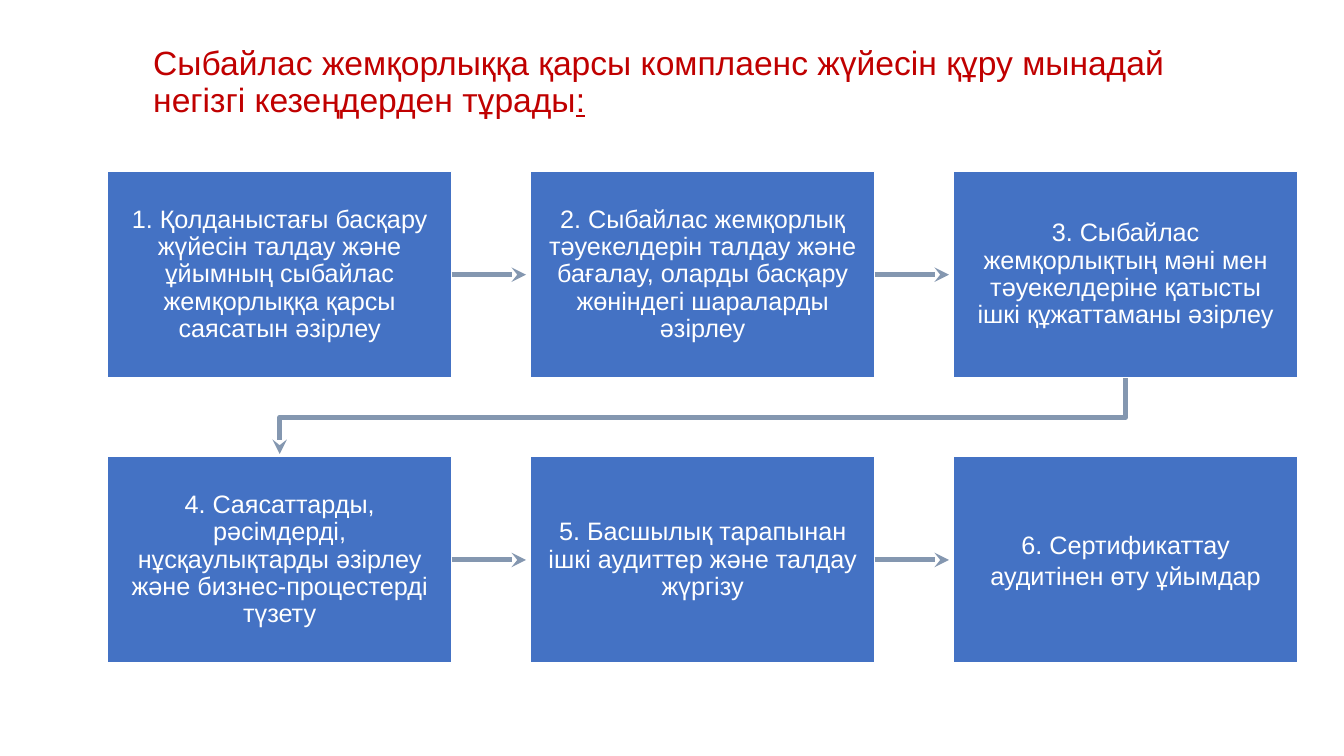
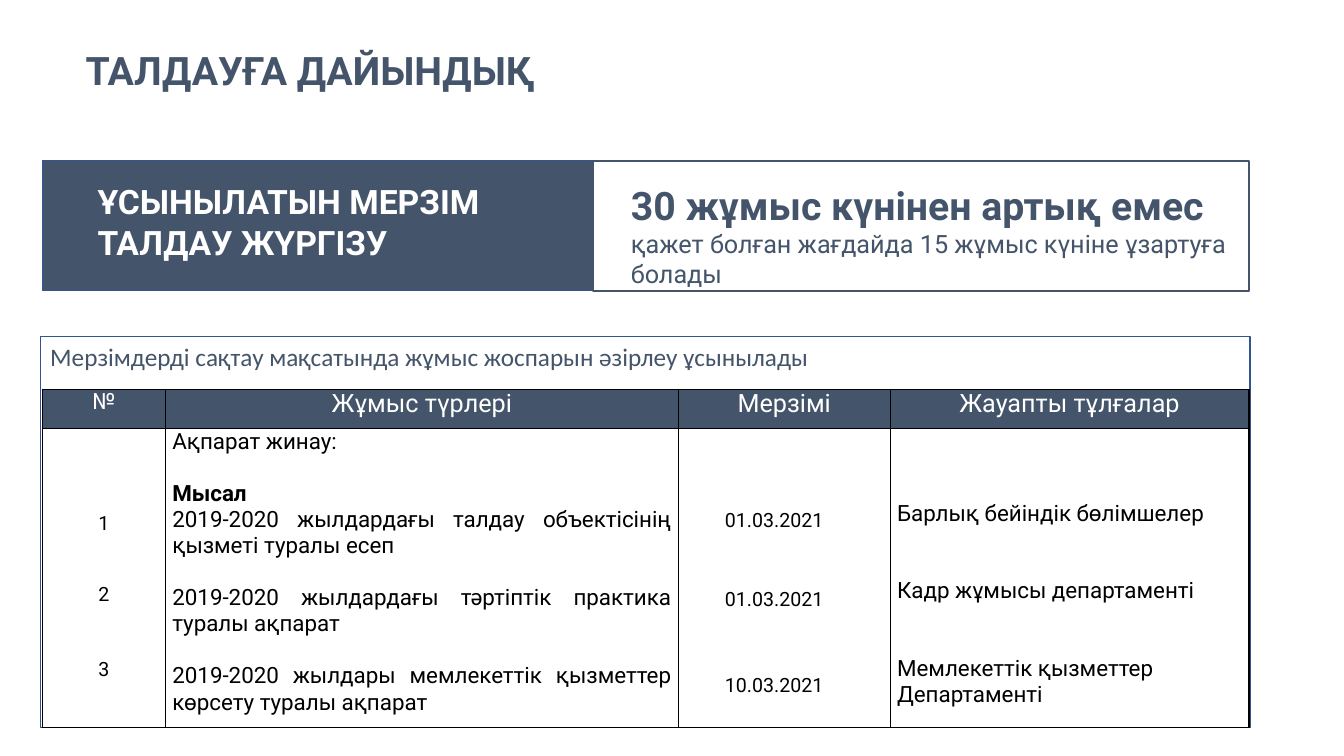
"""Build two slides: the stages of a compliance system and the preparation plan."""
from lxml.etree import SubElement
from pptx import Presentation
from pptx.dml.color import RGBColor
from pptx.enum.shapes import MSO_CONNECTOR, MSO_SHAPE
from pptx.enum.text import MSO_ANCHOR as Anchor, MSO_AUTO_SIZE as AutoSize, PP_ALIGN as Align
from pptx.oxml.ns import qn
from pptx.util import Inches, Pt

WIDTH, HEIGHT = Inches(13.33), Inches(7.5)
COLORS = {
    "red": "C00000", "blue": "4472C4", "arrow": "8497B0", "slate": "44546A",
    "edge": "325491", "white": "FFFFFF", "black": "000000",
}

BOX_LEFT, BOX_TOP = 8.02, 22.67
BOX_WIDTH, BOX_HEIGHT = 25.58, 27.33
COLUMN_STEP, ROW_STEP = 31.47, 37.73
COLUMNS, ARROW_GAP = 3, 0.35
STAGES = [
    "1. Қолданыстағы басқару жүйесін талдау және ұйымның сыбайлас жемқорлыққа қарсы саясатын әзірлеу",
    "2. Сыбайлас жемқорлық тәуекелдерін талдау және бағалау, оларды басқару жөніндегі шараларды әзірлеу",
    "3. Сыбайлас жемқорлықтың мәні мен тәуекелдеріне қатысты ішкі құжаттаманы әзірлеу",
    "4. Саясаттарды, рәсімдерді, нұсқаулықтарды әзірлеу және бизнес-процестерді түзету",
    "5. Басшылық тарапынан ішкі аудиттер және талдау жүргізу",
    "6. Сертификаттау аудитінен өту ұйымдар",
]

PLAN_COLUMNS = [9.15, 38.18, 15.75, 26.7]
PLAN_ROWS = [5.2, 39.6]
PLAN_HEADER = [("№", 16), ("Жұмыс түрлері", 18), ("Мерзімі", 18), ("Жауапты тұлғалар", 18)]
PLAN_BODY = [
    {"size": 14, "align": Align.CENTER, "top": 60, "left": 0.07,
     "lines": [("1", 0), ("2", 34), ("3", 37)]},
    {"size": 16, "align": Align.JUSTIFY, "top": 0, "left": 0.07,
     "lines": [
         ("Ақпарат жинау:", 0),
         ("Мысал", 18.75),
         ("2019-2020 жылдардағы талдау объектісінің қызметі туралы есеп", 0),
         ("2019-2020 жылдардағы тәртіптік практика туралы ақпарат", 18.75),
         ("2019-2020 жылдары мемлекеттік қызметтер көрсету туралы ақпарат", 18.75),
     ]},
    {"size": 14, "align": Align.LEFT, "top": 57.5, "left": 0.46,
     "lines": [("01.03.2021", 0), ("01.03.2021", 40), ("10.03.2021", 45)]},
    {"size": 16, "align": Align.LEFT, "top": 51.5, "left": 0.07,
     "lines": [
         ("Барлық бейіндік бөлімшелер", 0),
         ("Кадр жұмысы департаменті", 37),
         ("Мемлекеттік қызметтер Департаменті", 37),
     ]},
]


def across(share):
    return round(WIDTH * share / 100)


def down(share):
    return round(HEIGHT * share / 100)


def area(left, top, width, height):
    return across(left), down(top), across(width), down(height)


def rgb(name):
    return RGBColor.from_string(COLORS[name])


def set_font(font, size, color, name="Roboto", bold=False):
    font.size, font.name, font.bold = Pt(size), name, bold
    font.color.rgb = rgb(color)


def set_line(line, color, width):
    line.color.rgb = rgb(color)
    line.width = Pt(width)


def add_title(slide, place, text, size, color, name, bold=False):
    title = slide.shapes.title
    title.left, title.top, title.width, title.height = area(*place)
    frame = title.text_frame
    frame.text = text
    frame.auto_size = AutoSize.NONE
    frame.vertical_anchor = Anchor.MIDDLE
    paragraph = frame.paragraphs[0]
    paragraph.alignment, paragraph.line_spacing = Align.LEFT, 0.9
    set_font(paragraph.font, size, color, name, bold)
    return paragraph


def add_box(slide, place, fill, line, width):
    box = slide.shapes.add_shape(MSO_SHAPE.RECTANGLE, *area(*place))
    box.shadow.inherit = False
    if fill:
        box.fill.solid()
        box.fill.fore_color.rgb = rgb(fill)
    else:
        box.fill.background()
    set_line(box.line, line, width)
    return box


def add_text(slide, place):
    frame = slide.shapes.add_textbox(*area(*place)).text_frame
    frame.word_wrap = True
    return frame


def finish_arrow(arrow):
    set_line(arrow.line, "arrow", 3.5)
    SubElement(arrow.line._get_or_add_ln(), qn("a:tailEnd"), type="stealth")


def add_arrow(slide, left, right, middle):
    arrow = slide.shapes.add_connector(
        MSO_CONNECTOR.STRAIGHT, across(left), down(middle), across(right), down(middle))
    finish_arrow(arrow)
    SubElement(arrow._element.spPr, qn("a:effectLst"))


def add_bent_arrow(slide, points):
    start, *others = [(across(x), down(y)) for x, y in points]
    builder = slide.shapes.build_freeform(*start)
    builder.add_line_segments(others, close=False)
    arrow = builder.convert_to_shape()
    arrow.fill.background()
    arrow.shadow.inherit = False
    finish_arrow(arrow)


def add_stage(slide, left, top, text, spacing):
    box = add_box(slide, (left, top, BOX_WIDTH, BOX_HEIGHT), "blue", "white", 1)
    frame = box.text_frame
    frame.text = text
    frame.margin_left = frame.margin_right = Inches(0.14)
    frame.margin_top = frame.margin_bottom = Inches(0.14)
    paragraph = frame.paragraphs[0]
    paragraph.alignment, paragraph.line_spacing = Align.CENTER, spacing
    set_font(paragraph.font, 18, "white", "Arial")


def style_cell(cell, fill=None):
    properties = cell._tc.get_or_add_tcPr()
    for side in ("a:lnL", "a:lnR", "a:lnT", "a:lnB"):
        border = SubElement(properties, qn(side), w=str(Pt(1)))
        SubElement(SubElement(border, qn("a:solidFill")), qn("a:srgbClr"), val=COLORS["black"])
    if fill:
        cell.fill.solid()
        cell.fill.fore_color.rgb = rgb(fill)
    else:
        cell.fill.background()


def fill_cell(cell, lines, size, color, align, top=0, left=0.07):
    cell.margin_left, cell.margin_right = Inches(left), Inches(0.07)
    cell.margin_top, cell.margin_bottom = Pt(top), 0
    cell.text = "\n".join(text for text, _ in lines)
    for paragraph, (text, before) in zip(cell.text_frame.paragraphs, lines):
        paragraph.alignment, paragraph.space_before = align, Pt(before)
        set_font(paragraph.font, size, color, bold=text == "Мысал")


def add_plan_table(slide):
    place = area(3.15, 51.47, sum(PLAN_COLUMNS), sum(PLAN_ROWS))
    table = slide.shapes.add_table(len(PLAN_ROWS), len(PLAN_COLUMNS), *place).table
    table.first_row = table.horz_banding = False
    for row, share in zip(table.rows, PLAN_ROWS):
        row.height = down(share)
    for index, share in enumerate(PLAN_COLUMNS):
        table.columns[index].width = across(share)
        header, body = table.cell(0, index), table.cell(1, index)
        style_cell(header, "slate")
        style_cell(body)
        text, size = PLAN_HEADER[index]
        fill_cell(header, [(text, 0)], size, "white", Align.CENTER)
        fill_cell(body, color="black", **PLAN_BODY[index])


def build_stages(slide):
    title = add_title(
        slide, (10.65, 2.67, 81.6, 16.67),
        "Сыбайлас жемқорлыққа қарсы комплаенс жүйесін құру мынадай негізгі кезеңдерден тұрады",
        24, "red", "Arial")
    colon = title.add_run()
    colon.text = ":"
    colon.font.underline = True
    for index, text in enumerate(STAGES):
        row, column = divmod(index, COLUMNS)
        left, top = BOX_LEFT + column * COLUMN_STEP, BOX_TOP + row * ROW_STEP
        add_stage(slide, left, top, text, 1 if index == len(STAGES) - 1 else 0.9)
        if column < COLUMNS - 1:
            add_arrow(slide, left + BOX_WIDTH, left + COLUMN_STEP - ARROW_GAP, top + BOX_HEIGHT / 2)
    first = BOX_LEFT + BOX_WIDTH / 2
    last = first + (COLUMNS - 1) * COLUMN_STEP
    bottom, next_top = BOX_TOP + BOX_HEIGHT, BOX_TOP + ROW_STEP
    middle = (bottom + next_top) / 2
    add_bent_arrow(slide, [
        (last, bottom), (last, middle), (first, middle), (first, next_top - ARROW_GAP)])


def build_preparation(slide):
    add_title(slide, (5.62, 4.13, 86.25, 10.93), "ТАЛДАУҒА ДАЙЫНДЫҚ", 28, "slate", "Roboto", True)
    add_box(slide, (3.15, 21.2, 41, 17.2), "slate", "edge", 1)

    plan = add_box(slide, (3, 44.53, 90, 51.73), None, "edge", 1).text_frame
    plan.text = "Мерзімдерді сақтау мақсатында жұмыс жоспарын әзірлеу ұсынылады"
    plan.vertical_anchor = Anchor.TOP
    plan.paragraphs[0].alignment = Align.LEFT
    set_font(plan.paragraphs[0].font, 18, "slate", "Calibri")
    add_plan_table(slide)

    term = add_text(slide, (6.52, 23.33, 36.2, 12.13))
    term.text = "ҰСЫНЫЛАТЫН МЕРЗІМ\nТАЛДАУ ЖҮРГІЗУ"
    for paragraph in term.paragraphs:
        set_font(paragraph.font, 24, "white", bold=True)

    limit = add_text(slide, (46.2, 23.33, 50, 15.73)).paragraphs[0]
    for text, size, bold in [
        ("30 жұмыс күнінен артық емес ", 28, True),
        ("қажет болған жағдайда 15 жұмыс күніне ұзартуға болады", 18, False),
    ]:
        run = limit.add_run()
        run.text = text
        set_font(run.font, size, "slate", bold=bold)
    add_box(slide, (44.1, 21.33, 48.83, 17.2), None, "slate", 1.5)


def main():
    presentation = Presentation()
    presentation.slide_width, presentation.slide_height = WIDTH, HEIGHT
    title_only = presentation.slide_layouts[5]
    for build in (build_stages, build_preparation):
        build(presentation.slides.add_slide(title_only))
    presentation.save("out.pptx")


if __name__ == "__main__":
    main()
